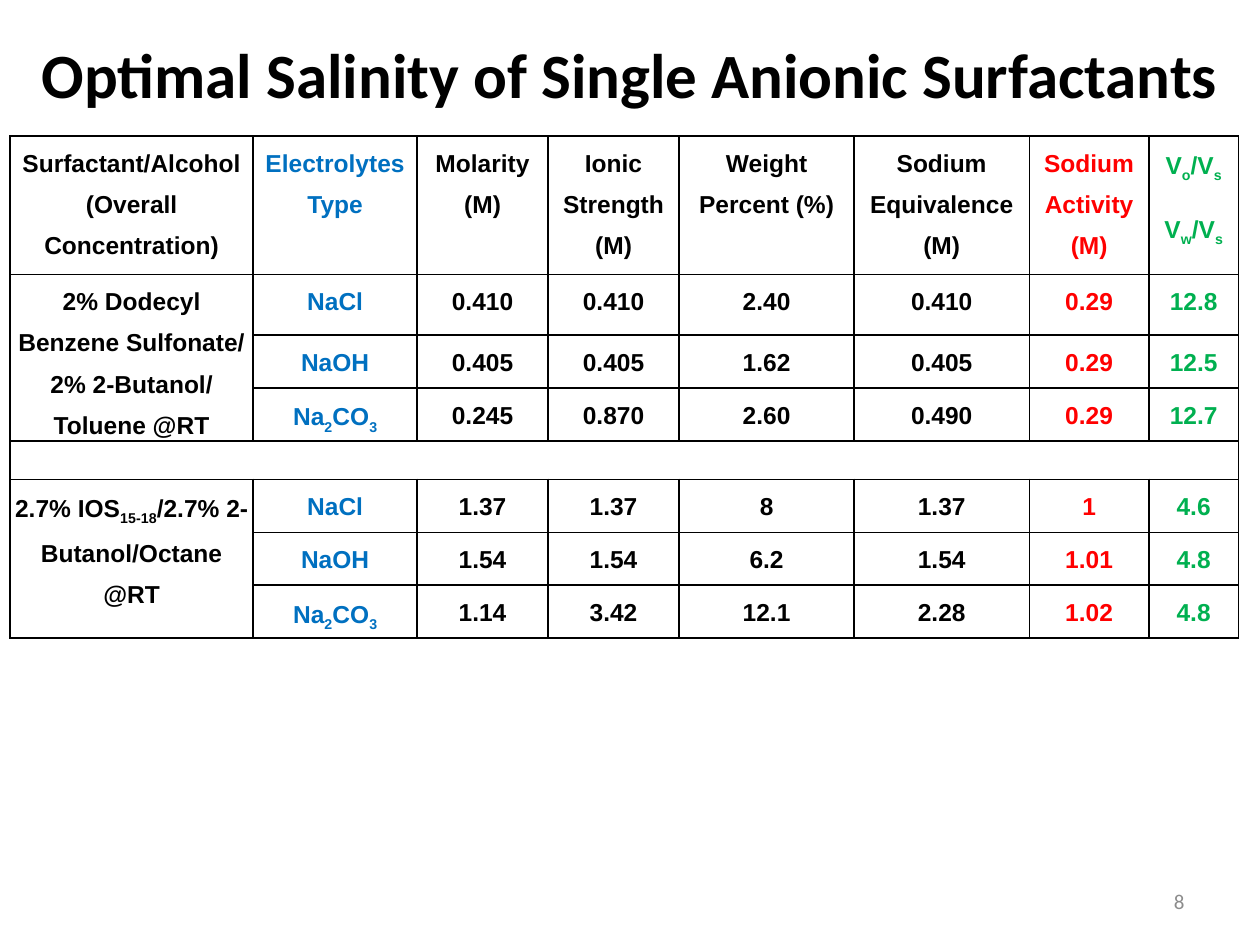
from lxml.etree import SubElement
from pptx import Presentation
from pptx.dml.color import RGBColor
from pptx.enum.text import MSO_ANCHOR, PP_ALIGN
from pptx.oxml.ns import qn
from pptx.util import Inches, Pt

BLACK, BLUE, RED, GREEN, GRAY = "000000", "0070C0", "FF0000", "00B050", "8C8C8C"
COL_WIDTHS = [1.93, 1.3, 1.04, 1.04, 1.39, 1.39, 0.95, 0.71]
COL_COLORS = [BLACK, BLUE, BLACK, BLACK, BLACK, BLACK, RED, GREEN]
ROW_HEIGHTS = [1.1, 0.48, 0.42, 0.42, 0.25, 0.42, 0.42, 0.42]

# Text between underscores is subscript; a line break starts a new paragraph.
ROWS = [
    ["Surfactant/Alcohol (Overall Concentration)", "Electrolytes Type",
     "Molarity (M)", "Ionic Strength (M)", "Weight Percent (%)",
     "Sodium Equivalence (M)", "Sodium Activity (M)", "V_o_/V_s_\nV_w_/V_s_"],
    ["2% Dodecyl Benzene Sulfonate/ 2% 2-Butanol/ Toluene @RT",
     "NaCl", "0.410", "0.410", "2.40", "0.410", "0.29", "12.8"],
    ["", "NaOH", "0.405", "0.405", "1.62", "0.405", "0.29", "12.5"],
    ["", "Na_2_CO_3_", "0.245", "0.870", "2.60", "0.490", "0.29", "12.7"],
    [""] * 8,
    ["2.7% IOS_15-18_/2.7% 2-Butanol/Octane @RT",
     "NaCl", "1.37", "1.37", "8", "1.37", "1", "4.6"],
    ["", "NaOH", "1.54", "1.54", "6.2", "1.54", "1.01", "4.8"],
    ["", "Na_2_CO_3_", "1.14", "3.42", "12.1", "2.28", "1.02", "4.8"],
]
MERGES = [((1, 0), (3, 0)), ((4, 0), (4, 7)), ((5, 0), (7, 0))]


def rgb(value):
    return RGBColor.from_string(value)


def set_all(target, values):
    for name, value in values.items():
        setattr(target, name, value)


class SlideBuilder:
    title_font = {"name": "Calibri", "size": Pt(36), "bold": True}
    cell_font = {"name": "Arial", "size": Pt(14), "bold": True}
    number_font = {"name": "Calibri", "size": Pt(12), "bold": False}
    cell_paragraph = {"alignment": PP_ALIGN.CENTER, "line_spacing": 1.5,
                      "space_before": Pt(0), "space_after": Pt(10)}
    cell_margins = {"margin_left": Inches(0.04), "margin_right": Inches(0.04),
                    "margin_top": 0, "margin_bottom": 0}

    def __init__(self, prs):
        self.s = prs.slides.add_slide(prs.slide_layouts[5])

    def add_runs(self, p, text, font, color):
        """Add text to a paragraph, with underscored parts as subscript."""
        for i, part in enumerate(text.split("_")):
            if part:
                r = p.add_run()
                r.text = part
                set_all(r.font, font)
                r.font.color.rgb = rgb(color)
                if i % 2:
                    r._r.get_or_add_rPr().set("baseline", "-25000")

    def place(self, sp, text, box, font, color, align):
        set_all(sp, dict(zip(("left", "top", "width", "height"), map(Inches, box))))
        tf = sp.text_frame
        set_all(tf, {"word_wrap": True, "vertical_anchor": MSO_ANCHOR.MIDDLE})
        p = tf.paragraphs[0]
        p.alignment = align
        self.add_runs(p, text, font, color)

    def title(self, text, box):
        self.place(self.s.shapes.title, text, box, self.title_font, BLACK,
                   PP_ALIGN.CENTER)

    def page_number(self, text, box):
        sp = self.s.shapes.add_textbox(*map(Inches, box))
        self.place(sp, text, box, self.number_font, GRAY, PP_ALIGN.RIGHT)

    def border(self, cell):
        tcPr = cell._tc.get_or_add_tcPr()
        for side in ("a:lnL", "a:lnR", "a:lnT", "a:lnB"):
            ln = SubElement(tcPr, qn(side), w=str(Pt(1)))
            fill = SubElement(ln, qn("a:solidFill"))
            SubElement(fill, qn("a:srgbClr"), val=BLACK)

    def cell(self, cell, text, color):
        set_all(cell, self.cell_margins)
        self.border(cell)
        cell.fill.background()
        if not text:
            return
        tf = cell.text_frame
        for i, line in enumerate(text.split("\n")):
            p = tf.add_paragraph() if i else tf.paragraphs[0]
            set_all(p, self.cell_paragraph)
            self.add_runs(p, line, self.cell_font, color)

    def table(self, left, top):
        frame = self.s.shapes.add_table(
            len(ROWS), len(COL_WIDTHS), Inches(left), Inches(top),
            Inches(sum(COL_WIDTHS)), Inches(sum(ROW_HEIGHTS)))
        table = frame.table
        set_all(table, {"first_row": False, "horz_banding": False})
        for column, width in zip(table.columns, COL_WIDTHS):
            column.width = Inches(width)
        for row, height, texts in zip(table.rows, ROW_HEIGHTS, ROWS):
            row.height = Inches(height)
            for cell, text, color in zip(row.cells, texts, COL_COLORS):
                self.cell(cell, text, color)
        for first, last in MERGES:
            table.cell(*first).merge(table.cell(*last))


def main():
    prs = Presentation()
    set_all(prs, {"slide_width": Inches(10), "slide_height": Inches(7.5)})
    slide = SlideBuilder(prs)
    slide.title("Optimal Salinity of Single Anionic Surfactants", (0, 0, 10, 1.17))
    slide.table(0.08, 1.08)
    slide.page_number("8", (7.17, 6.95, 2.33, 0.4))
    prs.save("out.pptx")


if __name__ == "__main__":
    main()
